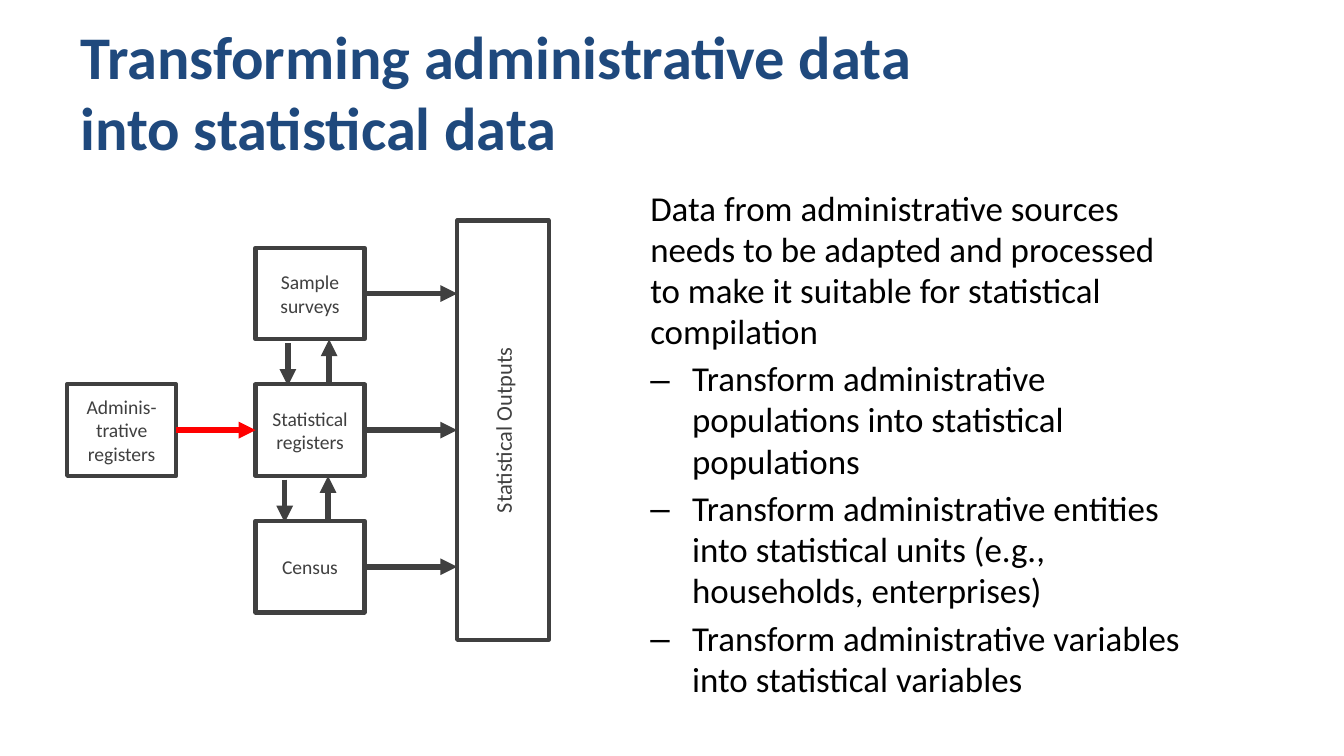
from lxml.etree import SubElement
from pptx import Presentation
from pptx.dml.color import RGBColor
from pptx.enum.shapes import MSO_CONNECTOR, MSO_SHAPE
from pptx.enum.text import MSO_ANCHOR, PP_ALIGN
from pptx.oxml.ns import qn
from pptx.util import Cm, Pt

NAVY = RGBColor(0x1F, 0x49, 0x7D)
BLACK = RGBColor(0x00, 0x00, 0x00)
GRAY = RGBColor(0x40, 0x40, 0x40)
RED = RGBColor(0xFF, 0x00, 0x00)
WHITE = RGBColor(0xFF, 0xFF, 0xFF)

BOX_WIDTH, BOX_HEIGHT = 2.06, 1.73
SOURCE_LEFT, PROCESS_LEFT, OUTPUT_LEFT = 1.27, 4.83, 8.64
MIDDLE_TOP, ROW_STEP = 7.26, 2.58
OUTPUT_LENGTH = 7.92

INTRODUCTION = (
    "Data from administrative sources needs to be adapted and processed "
    "to make it suitable for statistical compilation"
)
TRANSFORMATIONS = [
    "Transform administrative populations into statistical populations",
    "Transform administrative entities into statistical units (e.g., households, enterprises)",
    "Transform administrative variables into statistical variables",
]


class SlideBuilder:
    """Draws styled elements on the current slide."""

    font_name = "Calibri"

    def __init__(self, slide):
        self.slide = slide

    def run(self, paragraph, text, size, color, bold=False):
        run = paragraph.add_run()
        run.text = text
        run.font.name = self.font_name
        run.font.size = Pt(size)
        run.font.bold = bold
        run.font.color.rgb = color

    def text_box(self, left, top, width, height, anchor=MSO_ANCHOR.TOP):
        shape = self.slide.shapes.add_textbox(Cm(left), Cm(top), Cm(width), Cm(height))
        text_frame = shape.text_frame
        text_frame.word_wrap = True
        text_frame.vertical_anchor = anchor
        return text_frame

    def title(self, lines):
        text_frame = self.text_box(1.27, 0.58, 22.86, 2.39, MSO_ANCHOR.MIDDLE)
        paragraph = text_frame.paragraphs[0]
        paragraph.line_spacing = 0.98
        for index, line in enumerate(lines):
            if index:
                paragraph.add_line_break()
            self.run(paragraph, line, 32.4, NAVY, bold=True)

    def body(self, introduction, items):
        text_frame = self.text_box(12.04, 3.43, 10.62, 9.42)
        paragraph = text_frame.paragraphs[0]
        paragraph.line_spacing = 0.98
        self.run(paragraph, introduction, 18.7, BLACK)
        for item in items:
            paragraph = text_frame.add_paragraph()
            paragraph.line_spacing = 0.98
            paragraph.space_before = Pt(3.5)
            self.dash(paragraph)
            self.run(paragraph, item, 18.7, BLACK)

    def dash(self, paragraph):
        properties = paragraph._p.get_or_add_pPr()
        properties.set("marL", str(Cm(0.79)))
        properties.set("indent", str(-Cm(0.79)))
        SubElement(properties, qn("a:buFont"), typeface="Arial")
        SubElement(properties, qn("a:buChar"), char="–")

    def box(self, text, left, top, width=BOX_WIDTH, size=10.5, rotation=0):
        shape = self.slide.shapes.add_shape(
            MSO_SHAPE.RECTANGLE, Cm(left), Cm(top), Cm(width), Cm(BOX_HEIGHT)
        )
        shape.rotation = rotation
        shape.shadow.inherit = False
        shape.fill.solid()
        shape.fill.fore_color.rgb = WHITE
        shape.line.color.rgb = GRAY
        shape.line.width = Pt(2.25)
        text_frame = shape.text_frame
        text_frame.word_wrap = True
        text_frame.vertical_anchor = MSO_ANCHOR.MIDDLE
        text_frame.margin_left = text_frame.margin_right = Cm(0.18)
        text_frame.margin_top = text_frame.margin_bottom = Cm(0.1)
        paragraph = text_frame.paragraphs[0]
        paragraph.alignment = PP_ALIGN.CENTER
        self.run(paragraph, text, size, GRAY)
        return shape

    def arrow(self, start, end, color=GRAY, begin=None, finish=None):
        connector = self.slide.shapes.add_connector(
            MSO_CONNECTOR.STRAIGHT, *[Cm(value) for value in (*start, *end)]
        )
        connector.line.color.rgb = color
        connector.line.width = Pt(3)
        SubElement(connector.line._get_or_add_ln(), qn("a:tailEnd"), type="triangle")
        SubElement(connector._element.spPr, qn("a:effectLst"))
        if begin:
            connector.begin_connect(*begin)
        if finish:
            connector.end_connect(*finish)
            connector.end_x, connector.end_y = Cm(end[0]), Cm(end[1])


def main():
    presentation = Presentation()
    presentation.slide_width, presentation.slide_height = Cm(25.4), Cm(14.28)
    builder = SlideBuilder(presentation.slides.add_slide(presentation.slide_layouts[6]))
    builder.title(["Transforming administrative data", "into statistical data"])
    builder.body(INTRODUCTION, TRANSFORMATIONS)

    center = MIDDLE_TOP + BOX_HEIGHT / 2
    process_right = PROCESS_LEFT + BOX_WIDTH
    source = builder.box("Adminis-trative registers", SOURCE_LEFT, MIDDLE_TOP)
    output = builder.box(
        "Statistical Outputs",
        OUTPUT_LEFT + (BOX_HEIGHT - OUTPUT_LENGTH) / 2,
        MIDDLE_TOP, OUTPUT_LENGTH, size=12, rotation=270,
    )
    processes = {
        row: builder.box(text, PROCESS_LEFT, MIDDLE_TOP + row * ROW_STEP)
        for row, text in [(-1, "Sample surveys"), (0, "Statistical registers"), (1, "Census")]
    }
    for row, process in processes.items():
        level = center + row * ROW_STEP
        builder.arrow(
            (process_right, level), (OUTPUT_LEFT, level),
            begin=(process, 3), finish=None if row else (output, 0),
        )
    builder.arrow(
        (SOURCE_LEFT + BOX_WIDTH, center), (PROCESS_LEFT, center), RED,
        begin=(source, 3), finish=(processes[0], 1),
    )
    for row, down, up in [(-1, 5.44, 6.22), (0, 5.38, 6.2)]:
        bottom = MIDDLE_TOP + row * ROW_STEP + BOX_HEIGHT
        builder.arrow((down, bottom + 0.07), (down, bottom + 0.88))
        builder.arrow((up, bottom + 0.83), (up, bottom))

    presentation.save("out.pptx")


if __name__ == "__main__":
    main()
